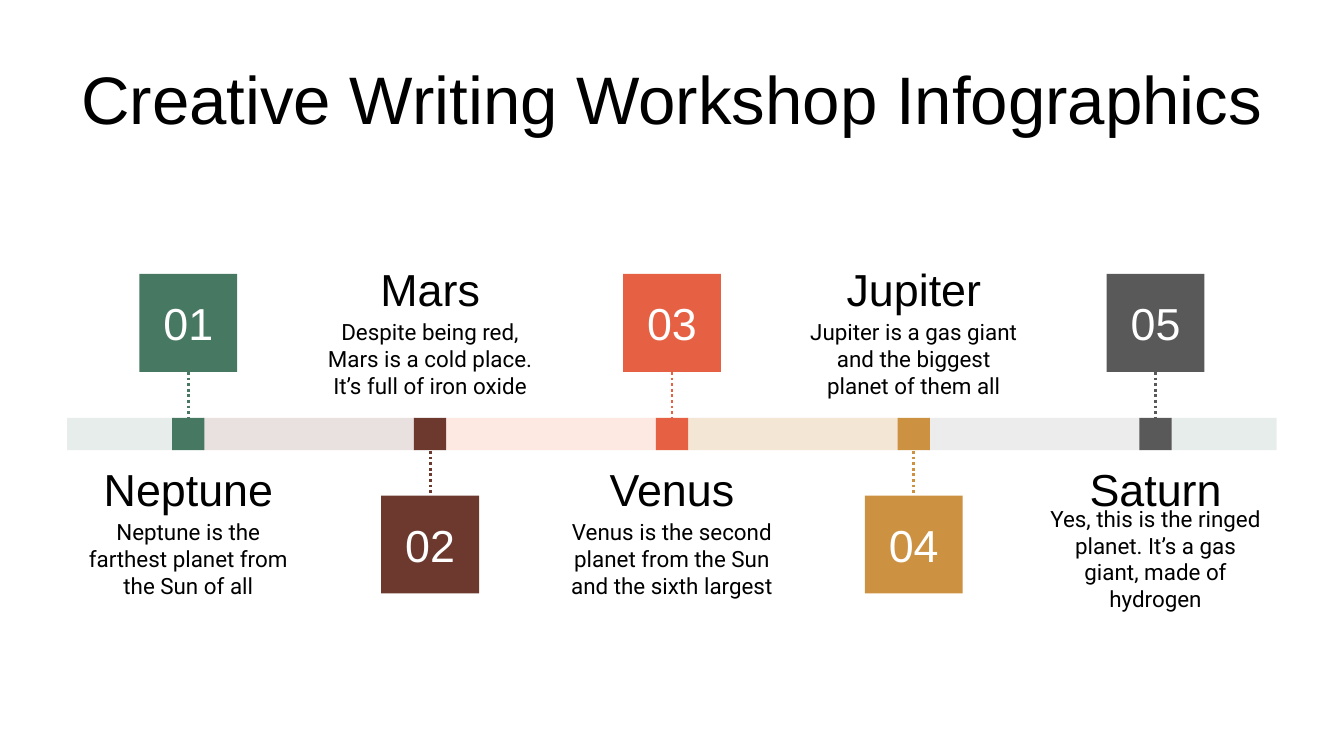
from lxml.etree import SubElement
from pptx import Presentation
from pptx.dml.color import RGBColor
from pptx.enum.dml import MSO_LINE
from pptx.enum.shapes import MSO_CONNECTOR, MSO_SHAPE
from pptx.enum.text import MSO_ANCHOR as Anchor, PP_ALIGN as Align
from pptx.oxml.ns import qn
from pptx.util import Cm, Pt

BLACK = RGBColor(0x00, 0x00, 0x00)
WHITE = RGBColor(0xFF, 0xFF, 0xFF)
GREEN = RGBColor(0x47, 0x78, 0x61)
BROWN = RGBColor(0x6D, 0x39, 0x2F)
RED = RGBColor(0xE6, 0x60, 0x43)
PEACH = RGBColor(0xFD, 0x88, 0x60)
OCHRE = RGBColor(0xCC, 0x91, 0x41)
GREY = RGBColor(0x59, 0x59, 0x59)

prs = Presentation()
prs.slide_width, prs.slide_height = Cm(25.4), Cm(14.29)
slide = prs.slides.add_slide(prs.slide_layouts[6])
shapes = slide.shapes


def add_block(left, top, width, height, color, opacity=100):
    block = shapes.add_shape(MSO_SHAPE.RECTANGLE, Cm(left), Cm(top), Cm(width), Cm(height))
    block.shadow.inherit = False
    block.fill.solid()
    block.fill.fore_color.rgb = color
    block.line.fill.background()
    if opacity < 100:
        tint = block.fill._xPr.find(qn("a:solidFill"))[0]
        SubElement(tint, qn("a:alpha"), val=str(opacity * 1000))


def add_text(left, top, width, height, text, size, font="Arial", color=BLACK, anchor=Anchor.MIDDLE):
    frame = shapes.add_textbox(Cm(left), Cm(top), Cm(width), Cm(height)).text_frame
    frame.word_wrap = True
    frame.vertical_anchor = anchor
    frame.margin_left = frame.margin_right = Cm(0.25)
    frame.margin_top = frame.margin_bottom = Cm(0.25)
    frame.text = text
    paragraph = frame.paragraphs[0]
    paragraph.alignment = Align.CENTER
    run_font = paragraph.runs[0].font
    run_font.name, run_font.size = font, Pt(size)
    run_font.color.rgb = color


# Timeline geometry in centimetres
FIRST, STEP = 3.56, 4.57
MARGIN, END_WIDTH = 1.27, 2.03
BAND_TOP, BAND_HEIGHT = 7.9, 0.61
AXIS = BAND_TOP + BAND_HEIGHT / 2
MARKER, SQUARE = 0.61, 1.85
UPPER_SQUARE, LOWER_SQUARE = 5.18, 9.37
UPPER_TEXT, LOWER_TEXT = 4.98, 8.76
TEXT_WIDTH, HEADING_HEIGHT, BODY_HEIGHT = 4.6, 0.94, 1.88

# Title
add_text(MARGIN, 0.84, 22.86, 1.6, "Creative Writing Workshop Infographics", 36, anchor=Anchor.TOP)

# Pale band: two ends and the stretches between markers
for end_left in (MARGIN, 25.4 - MARGIN - END_WIDTH):
    add_block(end_left, BAND_TOP, END_WIDTH, BAND_HEIGHT, GREEN, 13)
for i, (color, opacity) in enumerate([(BROWN, 15), (PEACH, 18), (OCHRE, 22), (GREY, 11)]):
    add_block(FIRST + i * STEP + 0.27, BAND_TOP, 4.04, BAND_HEIGHT, color, opacity)

# Planets, with the numbered square alternately above and below the band
planets = [
    ("Neptune", "Neptune is the farthest planet from the Sun of all", GREEN),
    ("Mars", "Despite being red, Mars is a cold place. It’s full of iron oxide", BROWN),
    ("Venus", "Venus is the second planet from the Sun and the sixth largest", RED),
    ("Jupiter", "Jupiter is a gas giant and the biggest planet of them all", OCHRE),
    ("Saturn", "Yes, this is the ringed planet. It’s a gas giant, made of hydrogen", GREY),
]
for i, (name, description, color) in enumerate(planets):
    center = FIRST + i * STEP
    if i % 2 == 0:
        square_top, text_top = UPPER_SQUARE, LOWER_TEXT
        stem_start, stem_end = UPPER_SQUARE + SQUARE, AXIS
    else:
        square_top, text_top = LOWER_SQUARE, UPPER_TEXT
        stem_start, stem_end = AXIS, LOWER_SQUARE

    # Dotted stem and marker
    stem = shapes.add_connector(
        MSO_CONNECTOR.STRAIGHT, Cm(center), Cm(stem_start), Cm(center), Cm(stem_end))
    stem.line.color.rgb = color
    stem.line.width = Pt(1.5)
    stem.line.dash_style = MSO_LINE.ROUND_DOT
    SubElement(stem._element.spPr, qn("a:effectLst"))
    add_block(center - MARKER / 2, BAND_TOP, MARKER, MARKER, color)

    # Numbered square
    add_block(center - SQUARE / 2, square_top, SQUARE, SQUARE, color)
    add_text(center - 0.76, square_top + (SQUARE - HEADING_HEIGHT) / 2, 1.52, HEADING_HEIGHT,
             f"{i + 1:02}", 24, color=WHITE)

    # Name and description
    text_left = center - TEXT_WIDTH / 2
    add_text(text_left, text_top, TEXT_WIDTH, HEADING_HEIGHT, name, 24)
    add_text(text_left, text_top + 0.86, TEXT_WIDTH, BODY_HEIGHT, description, 12, "Roboto")

prs.save("out.pptx")
